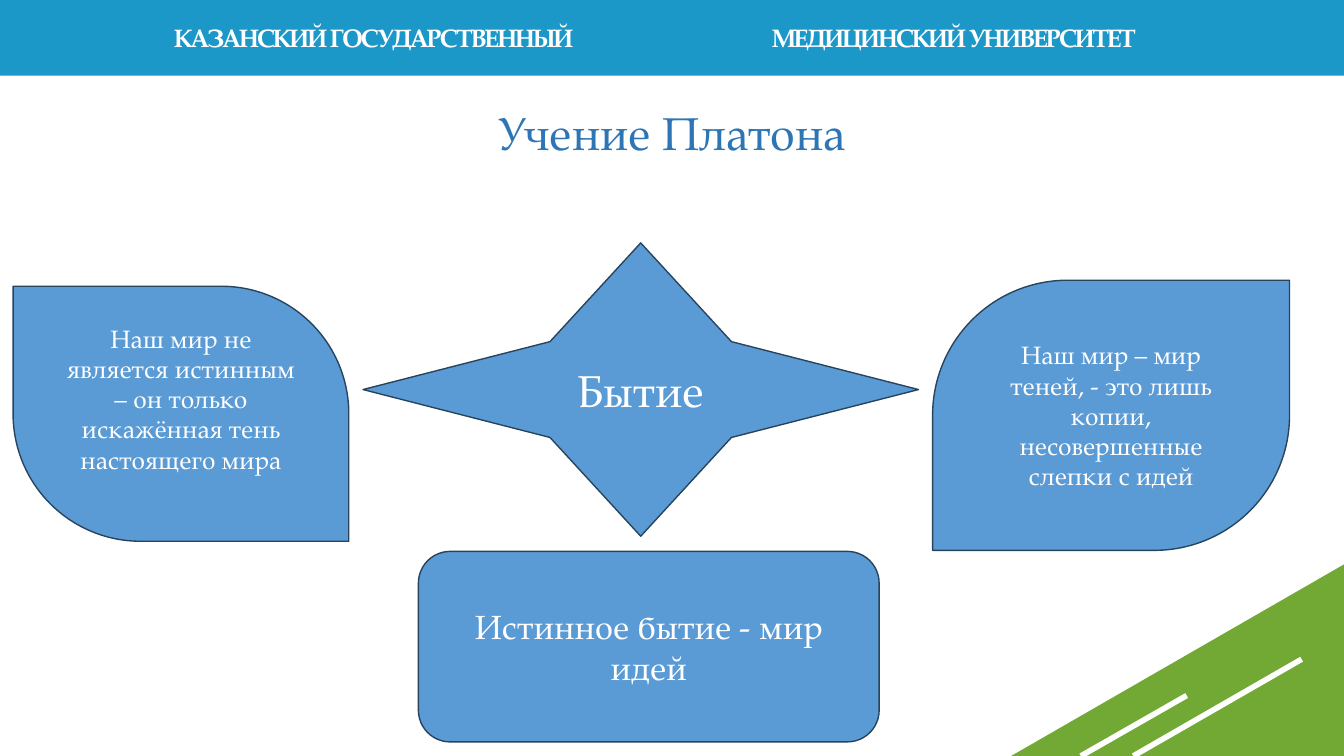
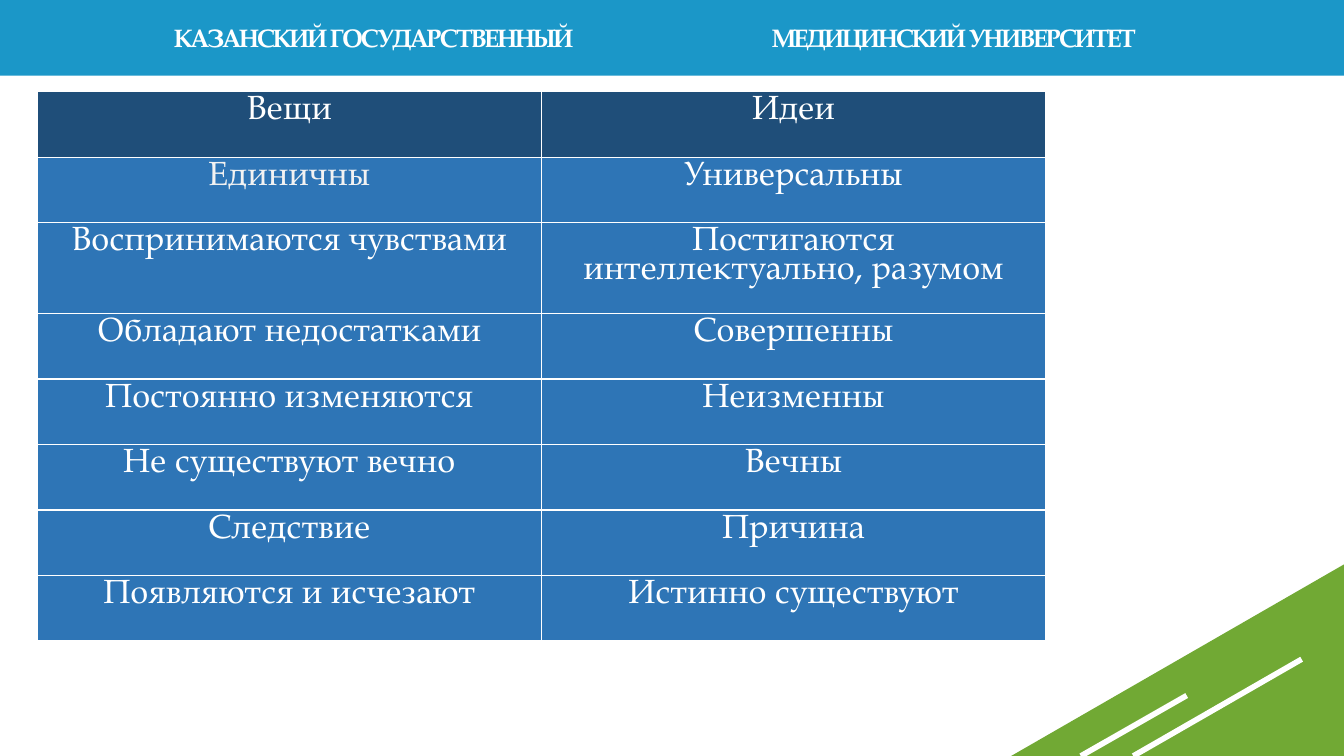
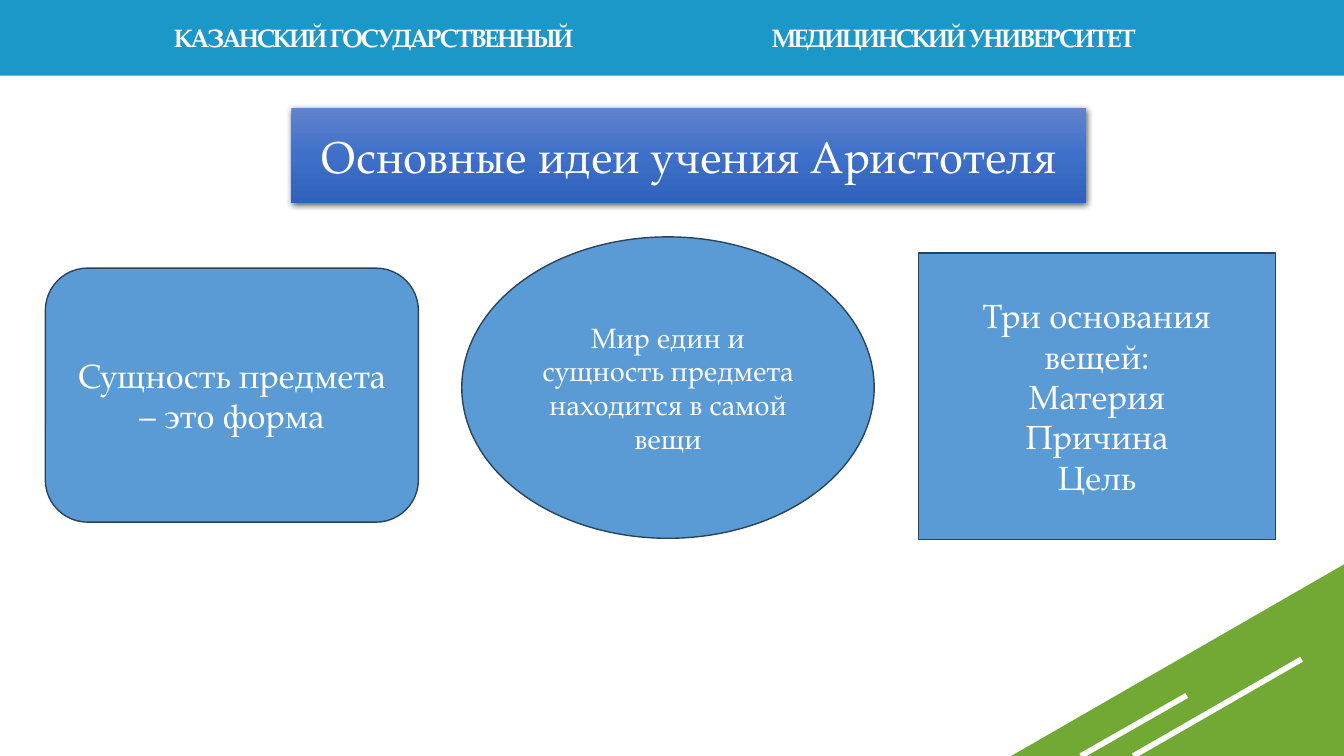
from lxml import etree
from pptx import Presentation
from pptx.dml.color import RGBColor
from pptx.enum.shapes import MSO_CONNECTOR, MSO_SHAPE
from pptx.enum.text import MSO_ANCHOR, MSO_AUTO_SIZE, PP_ALIGN
from pptx.oxml import parse_xml
from pptx.oxml.ns import qn
from pptx.util import Inches, Pt

FONT = "TeX Gyre Pagella"
WHITE = RGBColor(0xFF, 0xFF, 0xFF)
PALE = RGBColor(0xF2, 0xF2, 0xF2)
BAND = RGBColor(0x1B, 0x97, 0xC8)
GREEN = RGBColor(0x71, 0xA9, 0x34)
BLUE = RGBColor(0x5B, 0x9B, 0xD5)
OUTLINE = RGBColor(0x28, 0x44, 0x5D)
NAVY = RGBColor(0x1F, 0x4E, 0x79)
DEEP = RGBColor(0x2E, 0x75, 0xB6)

CENTER, LEFT, RIGHT = PP_ALIGN.CENTER, PP_ALIGN.LEFT, PP_ALIGN.RIGHT
MIDDLE, TOP = MSO_ANCHOR.MIDDLE, MSO_ANCHOR.TOP
RECT, OVAL = MSO_SHAPE.RECTANGLE, MSO_SHAPE.OVAL
ROUNDED, STAR = MSO_SHAPE.ROUNDED_RECTANGLE, MSO_SHAPE.STAR_4_POINT
LEAF, TRIANGLE = MSO_SHAPE.ROUND_2_DIAG_RECTANGLE, MSO_SHAPE.RIGHT_TRIANGLE
STRAIGHT = MSO_CONNECTOR.STRAIGHT
NO_AUTOFIT = MSO_AUTO_SIZE.NONE

DRAWING = 'xmlns:a="http://schemas.openxmlformats.org/drawingml/2006/main"'
WIDTH, HEIGHT = 13.33, 7.5

HEADERS = [
    ("КАЗАНСКИЙ ГОСУДАРСТВЕННЫЙ", 0.92, RIGHT),
    ("МЕДИЦИНСКИЙ УНИВЕРСИТЕТ", 7.56, LEFT),
]
STRIPES = [(10.72, 7.5, 11.77, 6.9), (11.24, 7.5, 12.91, 6.54)]

PLATO_TITLE = "Учение Платона"
PLATO_SHAPES = [
    (STAR, (3.6, 2.41, 5.51, 2.91), [0.231], 32, ["Бытие"], 0.05),
    (LEAF, (9.25, 2.78, 3.54, 2.68), [0.5, 0], 18,
     ["Наш мир – мир теней, - это лишь копии, несовершенные слепки с идей"], 0.05),
    (LEAF, (0.13, 2.84, 3.33, 2.53), [0, 0.5], 18,
     ["Наш мир не является истинным – он только искажённая тень настоящего мира"], 0.35),
    (ROUNDED, (4.15, 5.47, 4.57, 1.89), [], 24, ["Истинное бытие - мир идей"], 0.05),
]

COMPARISON = [
    ("Вещи", "Идеи"),
    ("Единичны", "Универсальны"),
    ("Воспринимаются чувствами", "Постигаются интеллектуально, разумом"),
    ("Обладают недостатками", "Совершенны"),
    ("Постоянно изменяются", "Неизменны"),
    ("Не существуют вечно", "Вечны"),
    ("Следствие", "Причина"),
    ("Появляются и исчезают", "Истинно существуют"),
]
ROW_HEIGHT, TALL_ROW, TALL_HEIGHT = 0.65, 2, 0.9

ARISTOTLE_TITLE = "Основные идеи учения Аристотеля"
ARISTOTLE_SHAPES = [
    (OVAL, (4.58, 2.35, 4.09, 2.99), [], 20,
     ["Мир един и сущность предмета находится в самой вещи"], 0.05),
    (ROUNDED, (0.45, 2.66, 3.7, 2.52), [], 24, ["Сущность предмета – это форма"], 0.05),
    (RECT, (9.11, 2.51, 3.54, 2.84), [], 24,
     ["Три основания вещей:", "Материя", "Причина", "Цель"], 0.05),
]
TITLE_STOPS = [(0, "6183CB"), (50000, "3E70CA"), (100000, "3062BB")]


def inches(values):
    return [Inches(value) for value in values]


def write(frame, lines, size, color=WHITE, align=CENTER, anchor=MIDDLE, bold=False, spacing=1.0):
    frame.word_wrap = True
    frame.vertical_anchor = anchor
    look = {"name": FONT, "size": Pt(size), "bold": bold}
    for index, line in enumerate(lines):
        para = frame.paragraphs[0] if index == 0 else frame.add_paragraph()
        para.alignment = align
        para.line_spacing = spacing
        span = para.add_run()
        span.text = line
        for name, value in look.items():
            setattr(span.font, name, value)
        span.font.color.rgb = color


def add_plain(shapes, kind, place, fill, line=None):
    shape = shapes.add_shape(kind, *inches(place))
    shape.shadow.inherit = False
    shape.fill.solid()
    shape.fill.fore_color.rgb = fill
    if line is None:
        shape.line.fill.background()
    else:
        shape.line.color.rgb = line
        shape.line.width = Pt(1)
    return shape


def add_diagram(page, items):
    for kind, place, adjustments, size, lines, bottom in items:
        shape = add_plain(page.shapes, kind, place, BLUE, OUTLINE)
        for index, value in enumerate(adjustments):
            shape.adjustments[index] = value
        shape.text_frame.margin_bottom = Inches(bottom)
        write(shape.text_frame, lines, size)


def set_title(page, text, place, size, color, spacing=1.0):
    title = page.shapes.title
    title.left, title.top, title.width, title.height = inches(place)
    title.text_frame.auto_size = NO_AUTOFIT
    write(title.text_frame, [text], size, color, spacing=spacing)
    return title


def decorate(layout, page):
    for holder in list(layout.placeholders)[1:]:
        layout.shapes.element.remove(holder.element)
    parts = [add_plain(page.shapes, RECT, (0, 0, WIDTH, 0.75), BAND)]
    corner = page.shapes.add_group_shape()
    triangle = add_plain(corner.shapes, TRIANGLE, (10.03, 5.6, 3.3, 1.9), GREEN)
    triangle.element.spPr.find(qn("a:xfrm")).set("flipH", "1")
    for ends in STRIPES:
        stripe = corner.shapes.add_connector(STRAIGHT, *inches(ends))
        stripe.line.color.rgb = WHITE
        stripe.line.width = Pt(4)
        etree.SubElement(stripe.element.spPr, qn("a:effectLst"))
    parts.append(corner)
    for text, left, align in HEADERS:
        box = page.shapes.add_textbox(*inches((left, 0.17, 4.86, 0.4)))
        write(box.text_frame, [text], 18, align=align, anchor=TOP, bold=True)
        box.text_frame.paragraphs[0].runs[0].font.element.set("spc", "-100") if hasattr(
            box.text_frame.paragraphs[0].runs[0].font, "element"
        ) else box.element.find(".//" + qn("a:rPr")).set("spc", "-100")
        parts.append(box)
    for part in parts:
        layout.shapes.element.append(part.element)


def paint_title(title):
    stops = "".join(
        f'<a:gs pos="{position}"><a:srgbClr val="{color}"/></a:gs>' for position, color in TITLE_STOPS
    )
    properties = title.element.spPr
    properties.append(parse_xml(f'<a:prstGeom {DRAWING} prst="rect"><a:avLst/></a:prstGeom>'))
    properties.append(parse_xml(
        f'<a:gradFill {DRAWING} rotWithShape="1"><a:gsLst>{stops}</a:gsLst>'
        '<a:lin ang="5400000" scaled="0"/></a:gradFill>'
    ))
    properties.append(parse_xml(
        f'<a:effectLst {DRAWING}><a:outerShdw blurRad="{Pt(4.5)}" dist="{Pt(1.5)}" dir="5400000"'
        ' algn="ctr" rotWithShape="0"><a:srgbClr val="000000"><a:alpha val="63000"/></a:srgbClr>'
        "</a:outerShdw></a:effectLst>"
    ))


def add_comparison(page):
    heights = [TALL_HEIGHT if index == TALL_ROW else ROW_HEIGHT for index in range(len(COMPARISON))]
    place = inches((0.37, 0.91, 10, sum(heights)))
    table = page.shapes.add_table(len(COMPARISON), 2, *place).table
    for row_index, row in enumerate(COMPARISON):
        table.rows[row_index].height = Inches(heights[row_index])
        for column_index, text in enumerate(row):
            cell = table.cell(row_index, column_index)
            color = PALE if (row_index, column_index) == (1, 0) else WHITE
            write(cell.text_frame, [text], 24, color, anchor=TOP, spacing=0.85)
            properties = cell.text_frame._txBody.getparent().get_or_add_tcPr()
            for side in ("lnL", "lnR", "lnT", "lnB"):
                properties.append(parse_xml(
                    f'<a:{side} {DRAWING} w="{Pt(1)}"><a:solidFill><a:srgbClr val="{WHITE}"/>'
                    f"</a:solidFill></a:{side}>"
                ))
            cell.fill.solid()
            cell.fill.fore_color.rgb = NAVY if row_index == 0 else DEEP


def main():
    deck = Presentation()
    deck.slide_width, deck.slide_height = inches((WIDTH, HEIGHT))
    layout = deck.slide_layouts[5]
    plato, comparison, aristotle = [deck.slides.add_slide(layout) for _ in range(3)]
    decorate(layout, plato)

    set_title(plato, PLATO_TITLE, (0.92, 0.84, 11.5, 1.01), 33, DEEP, 0.9)
    add_diagram(plato, PLATO_SHAPES)

    comparison.shapes.element.remove(comparison.shapes.title.element)
    add_comparison(comparison)

    paint_title(set_title(aristotle, ARISTOTLE_TITLE, (2.89, 1.07, 7.88, 0.94), 32, WHITE))
    add_diagram(aristotle, ARISTOTLE_SHAPES)
    deck.save("out.pptx")


if __name__ == "__main__":
    main()
